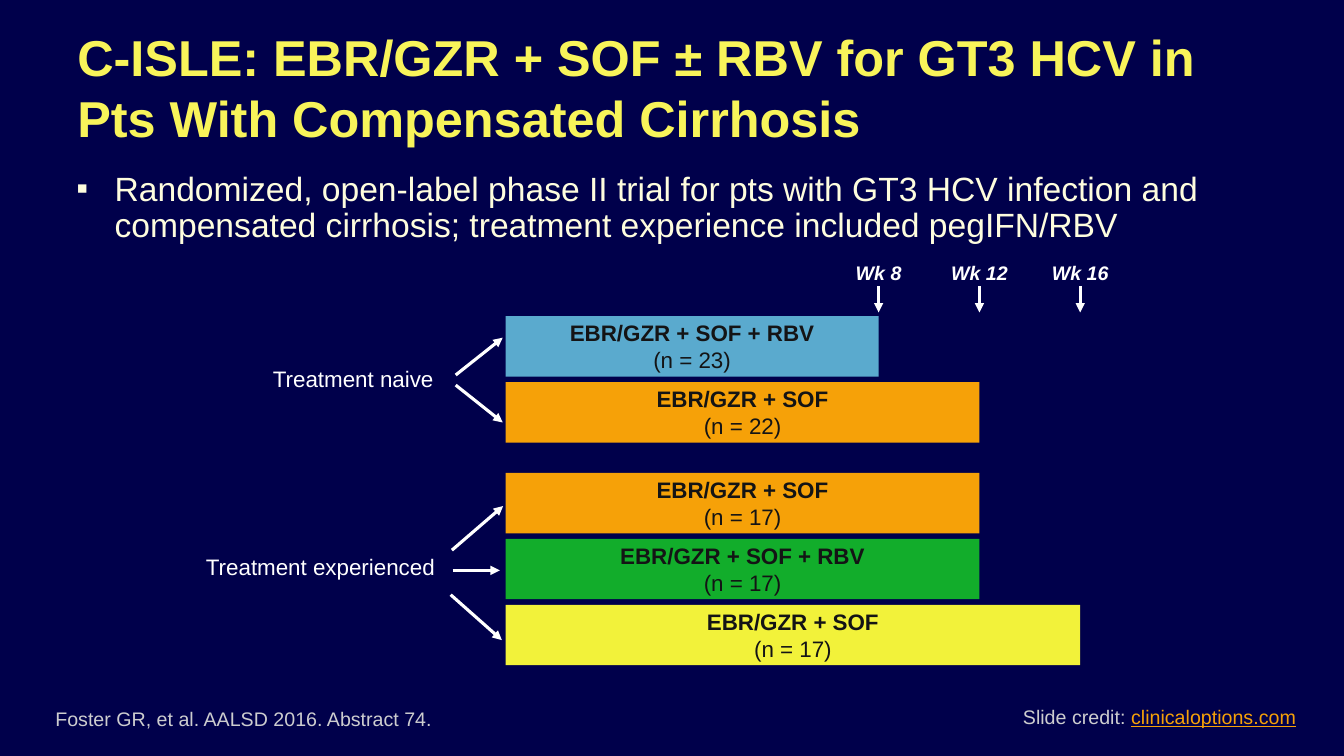
from dataclasses import dataclass

from lxml import etree
from pptx import Presentation
from pptx.dml.color import RGBColor
from pptx.enum.shapes import MSO_CONNECTOR, MSO_SHAPE
from pptx.enum.text import MSO_ANCHOR, MSO_AUTO_SIZE, PP_ALIGN
from pptx.oxml.ns import qn
from pptx.slide import Slide
from pptx.text.text import Font, TextFrame
from pptx.util import Emu, Inches, Pt

STRAIGHT = MSO_CONNECTOR.STRAIGHT
RECTANGLE = MSO_SHAPE.RECTANGLE
TOP, MIDDLE, BOTTOM = MSO_ANCHOR.TOP, MSO_ANCHOR.MIDDLE, MSO_ANCHOR.BOTTOM
NO_AUTO_SIZE = MSO_AUTO_SIZE.NONE
LEFT, CENTER = PP_ALIGN.LEFT, PP_ALIGN.CENTER

COLORS = {
    "background": "00004B",
    "title": "F8F45A",
    "body": "FEFDDE",
    "footer": "CDCDCF",
    "white": "FFFFFF",
    "ink": "141415",
    "blue": "5AAACE",
    "orange": "F6A108",
    "green": "12AD2B",
    "yellow": "F2F23A",
}
FONT_NAME = "Arial"

SLIDE_WIDTH, SLIDE_HEIGHT = Inches(13.33), Inches(7.5)
GRID_COLUMNS, GRID_ROWS = 160, 90

BAR_LEFT, BAR_HEIGHT, BAR_PITCH = 60.2, 7.2, 7.85
WEEK_ZERO, WEEK_WIDTH = 80.6, 3
WEEKS = (8, 12, 16)
WEEK_LABEL_WIDTH = 10.6


@dataclass(frozen=True)
class Box:
    left: float
    top: float
    width: float
    height: float


@dataclass(frozen=True)
class Arrow:
    start_column: float
    start_row: float
    end_column: float
    end_row: float


@dataclass(frozen=True)
class Arm:
    regimen: str
    patients: int
    weeks: int
    color: str


@dataclass(frozen=True)
class Group:
    label: str
    label_box: Box
    first_row: float
    arms: tuple[Arm, ...]
    arrows: tuple[Arrow, ...]


GROUPS = (
    Group(
        "Treatment naive",
        Box(29.5, 40.8, 25.1, 8.6),
        37.65,
        (
            Arm("EBR/GZR + SOF + RBV", 23, 8, "blue"),
            Arm("EBR/GZR + SOF", 22, 12, "orange"),
        ),
        (Arrow(54.25, 44.65, 59.85, 40.2), Arrow(54.25, 45.85, 59.85, 50.3)),
    ),
    Group(
        "Treatment experienced",
        Box(21.6, 62.6, 33.1, 9.8),
        56.3,
        (
            Arm("EBR/GZR + SOF", 17, 12, "orange"),
            Arm("EBR/GZR + SOF + RBV", 17, 12, "green"),
            Arm("EBR/GZR + SOF", 17, 16, "yellow"),
        ),
        (
            Arrow(53.8, 65.5, 59.9, 60.25),
            Arrow(53.9, 67.9, 59.5, 67.9),
            Arrow(53.65, 70.8, 59.75, 76.2),
        ),
    ),
)


def column(count: float) -> Emu:
    return Emu(round(SLIDE_WIDTH * count / GRID_COLUMNS))


def row(count: float) -> Emu:
    return Emu(round(SLIDE_HEIGHT * count / GRID_ROWS))


def place(box: Box) -> tuple[Emu, Emu, Emu, Emu]:
    return column(box.left), row(box.top), column(box.width), row(box.height)


def week_column(week: int) -> float:
    return WEEK_ZERO + WEEK_WIDTH * week


def color(name: str) -> RGBColor:
    return RGBColor.from_string(COLORS[name])


def format_font(font: Font, size: int, color_name: str, bold: bool = False) -> None:
    font.name = FONT_NAME
    font.size = Pt(size)
    font.bold = bold
    font.color.rgb = color(color_name)


def add_text(slide: Slide, box: Box, text: str, size: int, color_name: str,
             anchor: MSO_ANCHOR = TOP, alignment: PP_ALIGN = LEFT) -> TextFrame:
    text_frame = slide.shapes.add_textbox(*place(box)).text_frame
    text_frame.word_wrap = True
    text_frame.vertical_anchor = anchor
    text_frame.text = text
    paragraph = text_frame.paragraphs[0]
    paragraph.alignment = alignment
    format_font(paragraph.runs[0].font, size, color_name)
    return text_frame


def add_arrow(slide: Slide, arrow: Arrow) -> None:
    connector = slide.shapes.add_connector(
        STRAIGHT, column(arrow.start_column), row(arrow.start_row),
        column(arrow.end_column), row(arrow.end_row))
    connector.line.color.rgb = color("white")
    connector.line.width = Pt(2.25)
    properties = connector._element.spPr
    etree.SubElement(properties.find(qn("a:ln")), qn("a:tailEnd"), type="triangle")
    etree.SubElement(properties, qn("a:effectLst"))


def add_title(slide: Slide) -> None:
    title = slide.shapes.title
    title.left, title.top, title.width, title.height = place(Box(8, 3.1, 142.7, 14.5))
    text_frame = title.text_frame
    text_frame.text = "C-ISLE: EBR/GZR + SOF ± RBV for GT3 HCV in Pts With Compensated Cirrhosis"
    text_frame.auto_size = NO_AUTO_SIZE
    text_frame.vertical_anchor = MIDDLE
    paragraph = text_frame.paragraphs[0]
    paragraph.alignment = LEFT
    format_font(paragraph.runs[0].font, 36, "title", bold=True)


def add_summary(slide: Slide) -> None:
    text_frame = add_text(
        slide, Box(7.9, 19.9, 142.7, 10),
        "Randomized, open-label phase II trial for pts with GT3 HCV infection and "
        "compensated cirrhosis; treatment experience included pegIFN/RBV", 24, "body")
    paragraph = text_frame.paragraphs[0]
    properties = paragraph._p.get_or_add_pPr()
    properties.set("marL", str(Inches(0.38)))
    properties.set("indent", str(-Inches(0.38)))
    bullet_color = etree.SubElement(properties, qn("a:buClr"))
    etree.SubElement(bullet_color, qn("a:srgbClr"), val=COLORS["body"])
    etree.SubElement(properties, qn("a:buFont"), typeface=FONT_NAME)
    etree.SubElement(properties, qn("a:buChar"), char="▪")
    paragraph.line_spacing = 0.9
    paragraph.space_after = Pt(7)


def add_arm(slide: Slide, arm: Arm, top: float) -> None:
    box = Box(BAR_LEFT, top, week_column(arm.weeks) - BAR_LEFT, BAR_HEIGHT)
    bar = slide.shapes.add_shape(RECTANGLE, *place(box))
    bar.shadow.inherit = False
    bar.fill.solid()
    bar.fill.fore_color.rgb = color(arm.color)
    bar.line.fill.background()
    text_frame = bar.text_frame
    text_frame.word_wrap = False
    text_frame.vertical_anchor = MIDDLE
    text_frame.text = f"{arm.regimen}\n(n = {arm.patients})"
    for index, paragraph in enumerate(text_frame.paragraphs):
        paragraph.alignment = CENTER
        format_font(paragraph.runs[0].font, 16, "ink", bold=index == 0)


def add_group(slide: Slide, group: Group) -> None:
    add_text(slide, group.label_box, group.label, 16, "white", MIDDLE, CENTER)
    for index, arm in enumerate(group.arms):
        add_arm(slide, arm, group.first_row + index * BAR_PITCH)
    for arrow in group.arrows:
        add_arrow(slide, arrow)


def add_week(slide: Slide, week: int) -> None:
    center = week_column(week)
    box = Box(center - WEEK_LABEL_WIDTH / 2, 30.5, WEEK_LABEL_WIDTH, 4.1)
    text_frame = add_text(slide, box, f"Wk {week}", 14, "white", alignment=CENTER)
    font = text_frame.paragraphs[0].runs[0].font
    font.bold = font.italic = True
    add_arrow(slide, Arrow(center, 34.1, center, 37.2))


def add_footer(slide: Slide) -> None:
    add_text(slide, Box(5.4, 83.4, 105.1, 4.1),
             "Foster GR, et al. AALSD 2016. Abstract 74.", 14, "footer", BOTTOM)
    credit = add_text(slide, Box(120.6, 83.3, 35, 4.1), "Slide credit: ", 14, "footer")
    credit.word_wrap = False
    address = credit.paragraphs[0].add_run()
    address.text = "clinicaloptions.com"
    format_font(address.font, 14, "orange")
    address.font.underline = True


def main() -> None:
    presentation = Presentation()
    presentation.slide_width, presentation.slide_height = SLIDE_WIDTH, SLIDE_HEIGHT
    slide = presentation.slides.add_slide(presentation.slide_layouts.get_by_name("Title Only"))
    slide.background.fill.solid()
    slide.background.fill.fore_color.rgb = color("background")
    add_title(slide)
    add_summary(slide)
    for week in WEEKS:
        add_week(slide, week)
    for group in GROUPS:
        add_group(slide, group)
    add_footer(slide)
    presentation.save("out.pptx")


if __name__ == "__main__":
    main()
